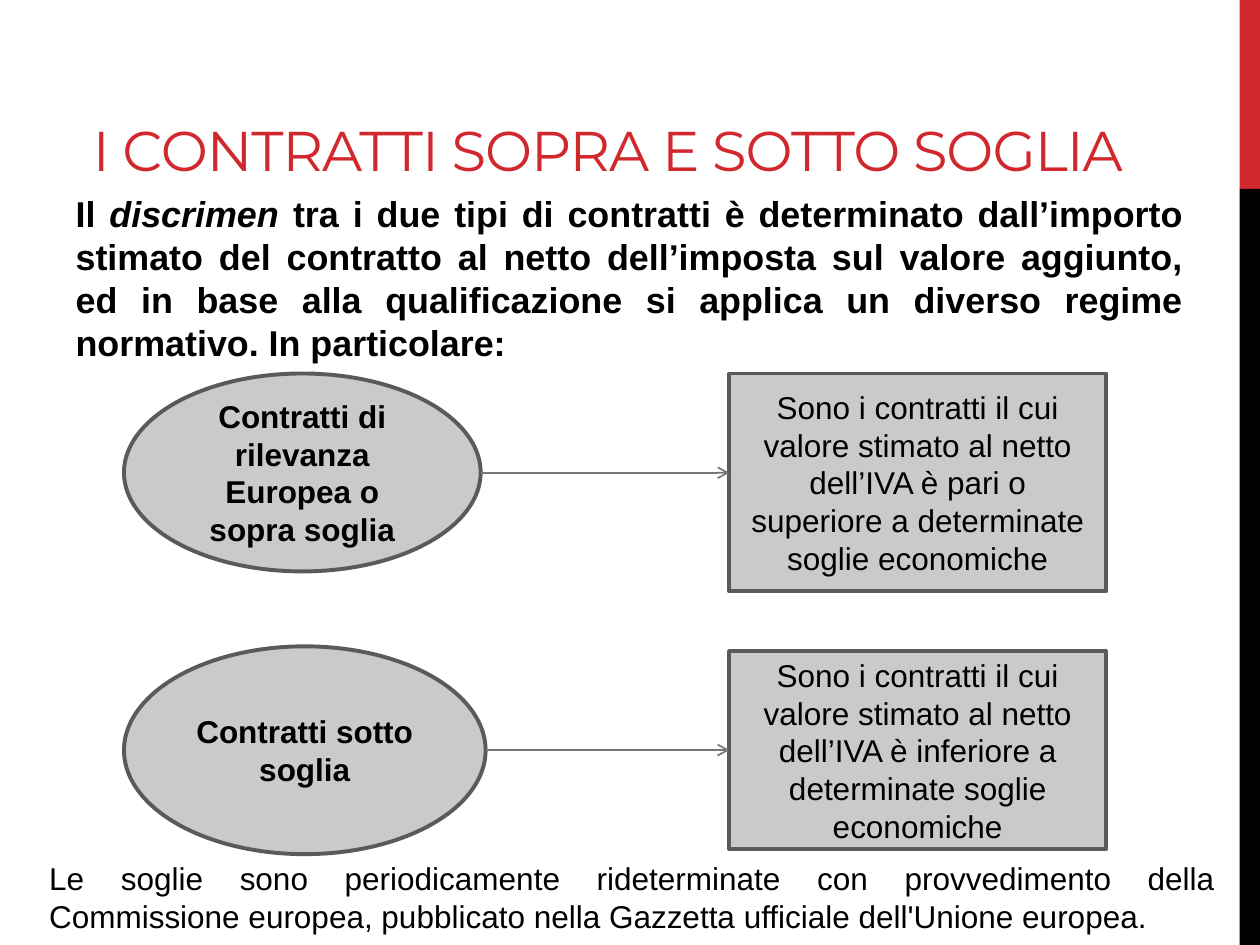
from dataclasses import dataclass

from lxml import etree
from pptx import Presentation
from pptx import util as u
from pptx.dml.color import RGBColor
from pptx.enum import shapes, text
from pptx.oxml.ns import qn


@dataclass(frozen=True)
class Theme:
    red: str = "D1282E"
    black: str = "000000"
    fill: str = "CACACA"
    outline: str = "5A5A5A"
    arrow: str = "777777"
    title_font: str = "Montserrat"
    text_font: str = "Arial"
    title_size: float = 32
    lead_size: float = 20.5
    text_size: float = 18


@dataclass(frozen=True)
class Area:
    """A rectangle on the slide, in centimetres."""
    left: float
    top: float
    width: float
    height: float

    def lengths(self) -> tuple:
        return u.Cm(self.left), u.Cm(self.top), u.Cm(self.width), u.Cm(self.height)


@dataclass(frozen=True)
class Threshold:
    """A contract type, its definition and the arrow between them."""
    name: str
    name_area: Area
    definition: str
    definition_area: Area
    arrow_y: float


THEME = Theme()
RECTANGLE = shapes.MSO_SHAPE.RECTANGLE
OVAL = shapes.MSO_SHAPE.OVAL
CENTER = text.PP_ALIGN.CENTER
JUSTIFY = text.PP_ALIGN.JUSTIFY

BARS = [
    (Area(24.99, 0, 0.41, 3.81), THEME.red),
    (Area(24.99, 3.81, 0.41, 15.24), THEME.black),
]
LEAD = [
    ("Il ", False),
    ("discrimen", True),
    (" tra i due tipi di contratti è determinato dall’importo stimato del contratto "
     "al netto dell’imposta sul valore aggiunto, ed in base alla qualificazione si "
     "applica un diverso regime normativo. In particolare:", False),
]
THRESHOLDS = [
    Threshold(
        "Contratti di rilevanza Europea o sopra soglia",
        Area(2.5, 7.53, 7.19, 3.99),
        "Sono i contratti il cui valore stimato al netto dell’IVA è pari o superiore "
        "a determinate soglie economiche",
        Area(14.7, 7.53, 7.6, 4.39),
        9.53,
    ),
    Threshold(
        "Contratti sotto soglia",
        Area(2.5, 13.03, 7.29, 4.19),
        "Sono i contratti il cui valore stimato al netto dell’IVA è inferiore "
        "a determinate soglie economiche",
        Area(14.7, 13.13, 7.6, 3.99),
        15.12,
    ),
]
NOTE = ("Le soglie sono periodicamente rideterminate con provvedimento della Commissione "
        "europea, pubblicato nella Gazzetta ufficiale dell'Unione europea.")


def place(shape, area: Area) -> None:
    shape.left, shape.top, shape.width, shape.height = area.lengths()


def style(para, size: float, align, color: str = THEME.black,
          font: str = THEME.text_font, bold: bool = False) -> None:
    para.alignment = align
    para.font.name = font
    para.font.size = u.Pt(size)
    para.font.bold = bold
    para.font.color.rgb = RGBColor.from_string(color)


def add_block(page, kind, area: Area, fill: str):
    block = page.shapes.add_shape(kind, *area.lengths())
    block.shadow.inherit = False
    block.fill.solid()
    block.fill.fore_color.rgb = RGBColor.from_string(fill)
    block.line.fill.background()
    return block


def add_label(page, kind, area: Area, words: str, bold: bool) -> None:
    label = add_block(page, kind, area, THEME.fill)
    label.line.color.rgb = RGBColor.from_string(THEME.outline)
    label.line.width = u.Pt(2.25)
    frame = label.text_frame
    frame.word_wrap = True
    frame.vertical_anchor = text.MSO_ANCHOR.MIDDLE
    frame.text = words
    style(frame.paragraphs[0], THEME.text_size, CENTER, bold=bold)


def add_arrow(page, start: float, end: float, y: float) -> None:
    arrow = page.shapes.add_connector(
        shapes.MSO_CONNECTOR.STRAIGHT, u.Cm(start), u.Cm(y), u.Cm(end), u.Cm(y))
    arrow.line.color.rgb = RGBColor.from_string(THEME.arrow)
    arrow.line.width = u.Pt(1)
    properties = arrow._element.spPr
    etree.SubElement(properties.find(qn("a:ln")), qn("a:tailEnd"), type="arrow")
    etree.SubElement(properties, qn("a:effectLst"))


def add_threshold(page, item: Threshold) -> None:
    add_label(page, OVAL, item.name_area, item.name, bold=True)
    add_label(page, RECTANGLE, item.definition_area, item.definition, bold=False)
    add_arrow(page, item.name_area.left + item.name_area.width,
              item.definition_area.left, item.arrow_y)


def write_title(page) -> None:
    title = page.shapes.title
    place(title, Area(0.94, 0, 22.63, 3.81))
    frame = title.text_frame
    frame.text = "I CONTRATTI SOPRA E SOTTO SOGLIA"
    frame.auto_size = text.MSO_AUTO_SIZE.NONE
    frame.vertical_anchor = text.MSO_ANCHOR.BOTTOM
    para = frame.paragraphs[0]
    style(para, THEME.title_size, CENTER, THEME.red, THEME.title_font)
    para.runs[0].font._element.set("spc", "-60")


def write_lead(page) -> None:
    body = page.placeholders[1]
    place(body, Area(1.27, 3.73, 22.86, 14.27))
    body.text_frame.auto_size = text.MSO_AUTO_SIZE.NONE
    para = body.text_frame.paragraphs[0]
    for words, italic in LEAD:
        span = para.add_run()
        span.text = words
        span.font.italic = italic
    style(para, THEME.lead_size, JUSTIFY, bold=True)
    para.line_spacing = 1.0
    para.space_before = u.Pt(0)
    para.space_after = u.Pt(6)
    properties = para._p.get_or_add_pPr()
    properties.set("marL", "0")
    properties.set("indent", "0")
    bullet = etree.Element(qn("a:buNone"))
    properties.find(qn("a:defRPr")).addprevious(bullet)


def write_note(page) -> None:
    box = page.shapes.add_textbox(*Area(0.74, 17.2, 24, 1.8).lengths())
    frame = box.text_frame
    frame.word_wrap = True
    frame.auto_size = text.MSO_AUTO_SIZE.SHAPE_TO_FIT_TEXT
    frame.text = NOTE
    style(frame.paragraphs[0], THEME.text_size, JUSTIFY)


def main() -> None:
    deck = Presentation()
    deck.slide_width, deck.slide_height = u.Cm(25.4), u.Cm(19.05)
    page = deck.slides.add_slide(deck.slide_layouts[1])
    for area, color in BARS:
        add_block(page, RECTANGLE, area, color)
    write_title(page)
    write_lead(page)
    for item in THRESHOLDS:
        add_threshold(page, item)
    write_note(page)
    deck.save("out.pptx")


if __name__ == "__main__":
    main()
